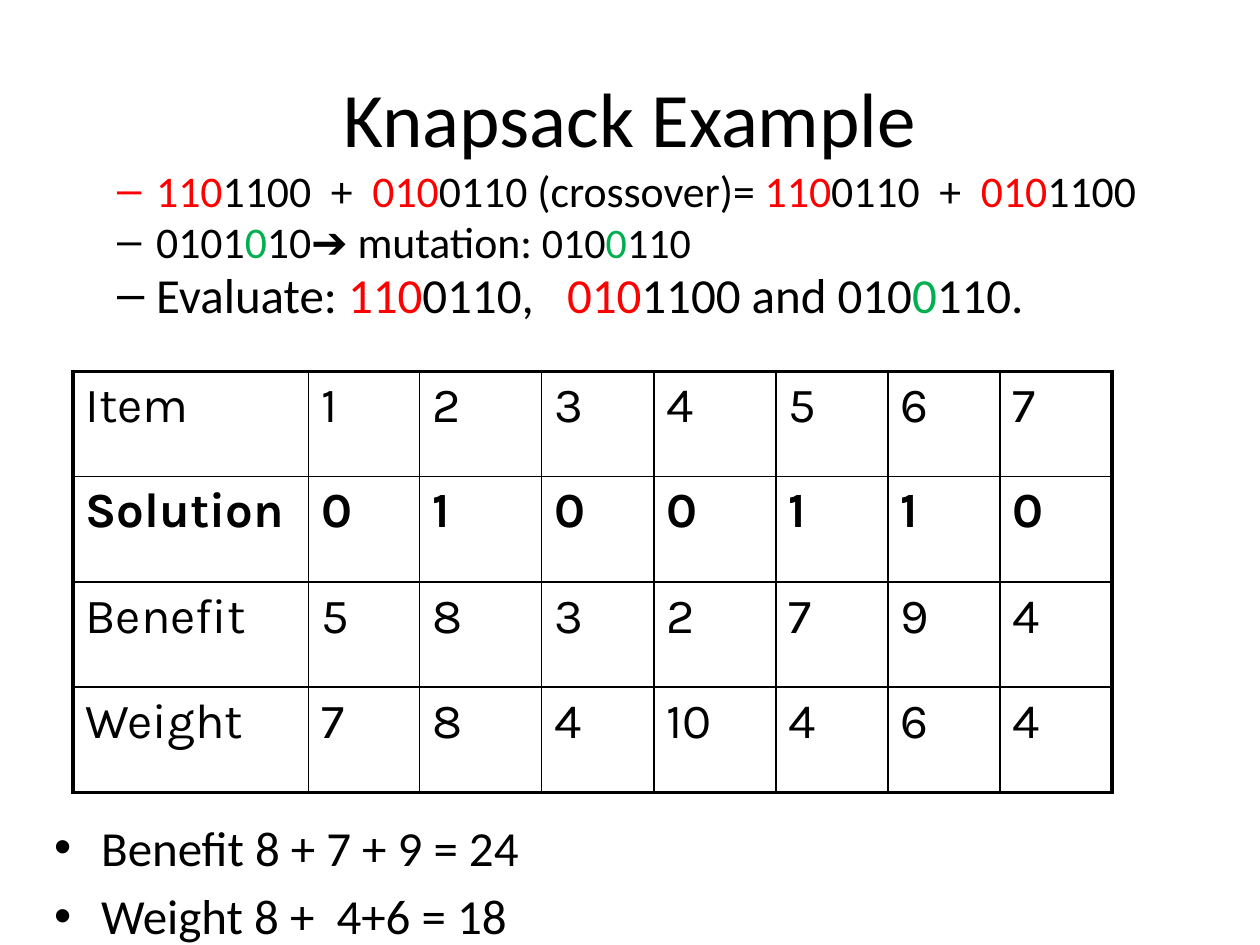
from pptx import Presentation
from pptx.dml.color import RGBColor
from pptx.enum.text import MSO_ANCHOR, PP_ALIGN
from pptx.oxml.ns import qn
from pptx.util import Cm, Pt
from lxml import etree

MIDDLE = MSO_ANCHOR.MIDDLE
CENTER = PP_ALIGN.CENTER
COLORS = {"black": "000000", "red": "FF0000", "green": "00B050"}
THIN, THICK = 1, 2.25

# Each line is (size, runs); a run is (text, colour) or (text, colour, size).
STEPS = [
    (25, [("110", "red"), ("1100  +  ", "black"), ("010", "red"),
          ("0110 (crossover)= ", "black"), ("110", "red"),
          ("0110  +  ", "black"), ("010", "red"), ("1100", "black")]),
    (25, [("0101", "black"), ("0", "green"), ("10➔ mutation: ", "black"),
          ("010", "black", 24), ("0", "green", 24), ("110", "black", 24)]),
    (28, [("Evaluate: ", "black"), ("110", "red"), ("0110,   ", "black"),
          ("010", "red"), ("1100 and 010", "black"), ("0", "green"),
          ("110.", "black")]),
]
TOTALS = [(28, [("Benefit 8 + 7 + 9 = 24", "black")]),
          (28, [("Weight 8 +  4+6 = 18", "black")])]
ITEMS = [
    ["Item", 1, 2, 3, 4, 5, 6, 7],
    ["Solution", 0, 1, 0, 0, 1, 1, 0],
    ["Benefit", 5, 8, 3, 2, 7, 9, 4],
    ["Weight", 7, 8, 4, 10, 4, 6, 4],
]
WIDTHS = [4.75, 2.24, 2.46, 2.26, 2.46, 2.26, 2.26, 2.26]


class Deck:
    def __init__(self, slide, font="Calibri"):
        self.slide = slide
        self.font = font

    def run(self, para, text, size, color="black", font=None, bold=False):
        run = para.add_run()
        run.text = text
        run.font.name = font or self.font
        run.font.size = Pt(size)
        run.font.bold = bold
        run.font.color.rgb = RGBColor.from_string(COLORS[color])

    def title(self, text, left, top, width, height):
        shape = self.slide.shapes.title
        shape.left, shape.top = Cm(left), Cm(top)
        shape.width, shape.height = Cm(width), Cm(height)
        frame = shape.text_frame
        frame.vertical_anchor = MIDDLE
        para = frame.paragraphs[0]
        para.alignment = CENTER
        self.run(para, text, 44)

    def bullet(self, para, mark, indent, hang):
        props = para._p.get_or_add_pPr()
        props.set("marL", str(Cm(indent)))
        props.set("indent", str(-Cm(hang)))
        etree.SubElement(props, qn("a:buFont"), typeface="Arial")
        etree.SubElement(props, qn("a:buChar"), char=mark)

    def bullets(self, lines, box, mark, indent, hang, spacing=1.0):
        frame = self.slide.shapes.add_textbox(*map(Cm, box)).text_frame
        frame.word_wrap = True
        for i, (size, runs) in enumerate(lines):
            para = frame.add_paragraph() if i else frame.paragraphs[0]
            para.line_spacing = spacing
            para.space_before = Pt(size * 0.2)
            self.bullet(para, mark, indent, hang)
            for text, color, *own in runs:
                self.run(para, text, own[0] if own else size, color)

    def border(self, cell, side, width):
        line = etree.SubElement(cell._tc.get_or_add_tcPr(),
                                qn("a:ln" + side), w=str(Pt(width)))
        fill = etree.SubElement(line, qn("a:solidFill"))
        etree.SubElement(fill, qn("a:srgbClr"), val=COLORS["black"])

    def table(self, rows, widths, left, top, height, bold_row):
        last_row, last_col = len(rows) - 1, len(widths) - 1
        table = self.slide.shapes.add_table(
            len(rows), len(widths), Cm(left), Cm(top),
            Cm(sum(widths)), Cm(height * len(rows))).table
        table.first_row = table.horz_banding = False
        for col, width in zip(table.columns, widths):
            col.width = Cm(width)
        for r, values in enumerate(rows):
            table.rows[r].height = Cm(height)
            for c, value in enumerate(values):
                cell = table.cell(r, c)
                outer = {"L": c == 0, "R": c == last_col,
                         "T": r == 0, "B": r == last_row}
                for side, edge in outer.items():
                    self.border(cell, side, THICK if edge else THIN)
                cell.fill.background()
                para = cell.text_frame.paragraphs[0]
                para.space_before = Pt(5.6)
                self.run(para, str(value), 28, font="Karla",
                         bold=r == bold_row)


def main():
    prs = Presentation()
    prs.slide_width, prs.slide_height = Cm(25.4), Cm(19.05)
    deck = Deck(prs.slides.add_slide(prs.slide_layouts[5]))
    deck.title("Knapsack Example", 1.27, 0.76, 22.86, 3.18)
    deck.bullets(STEPS, (0.84, 3.38, 23.06, 3.6), "–", 2.06, 0.79, 0.8)
    deck.table(ITEMS, WIDTHS, 1.47, 7.49, 2.12, bold_row=1)
    deck.bullets(TOTALS, (0.84, 16.35, 23.06, 2.7), "•", 0.95, 0.95)
    prs.save("out.pptx")


if __name__ == "__main__":
    main()
